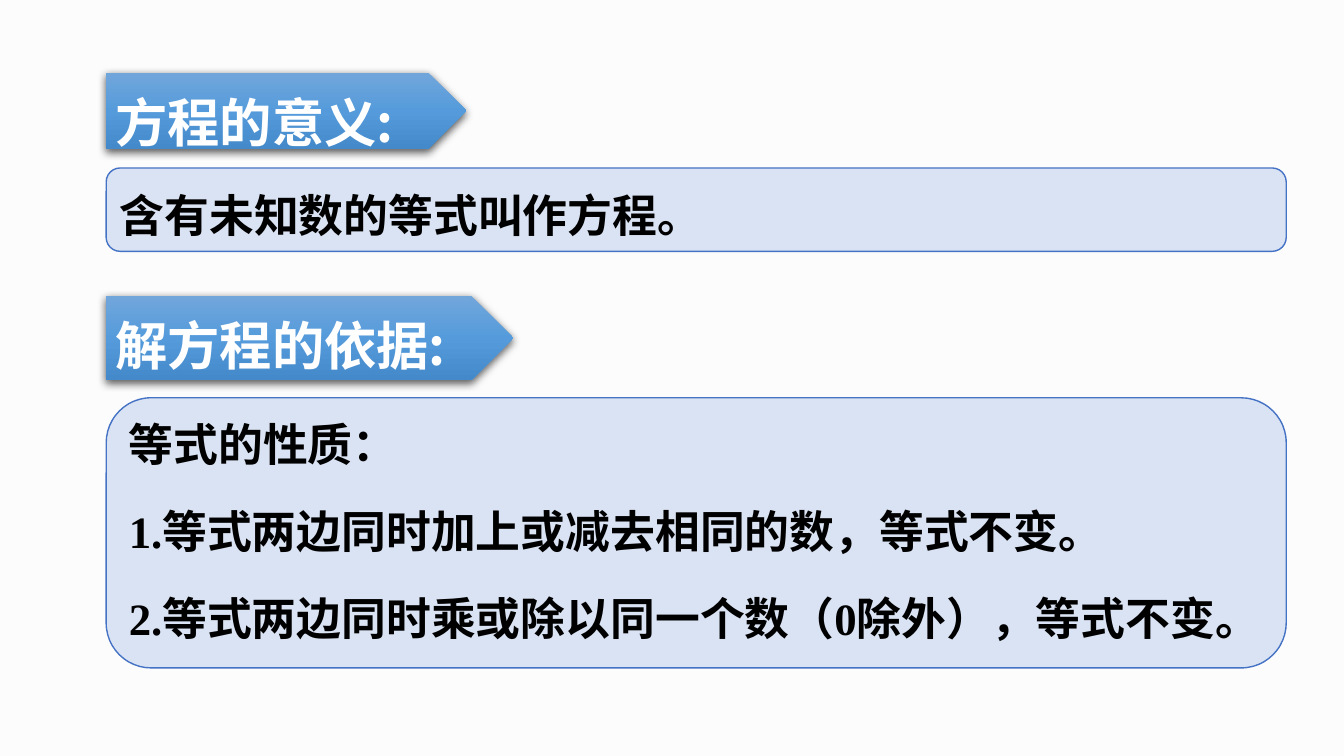
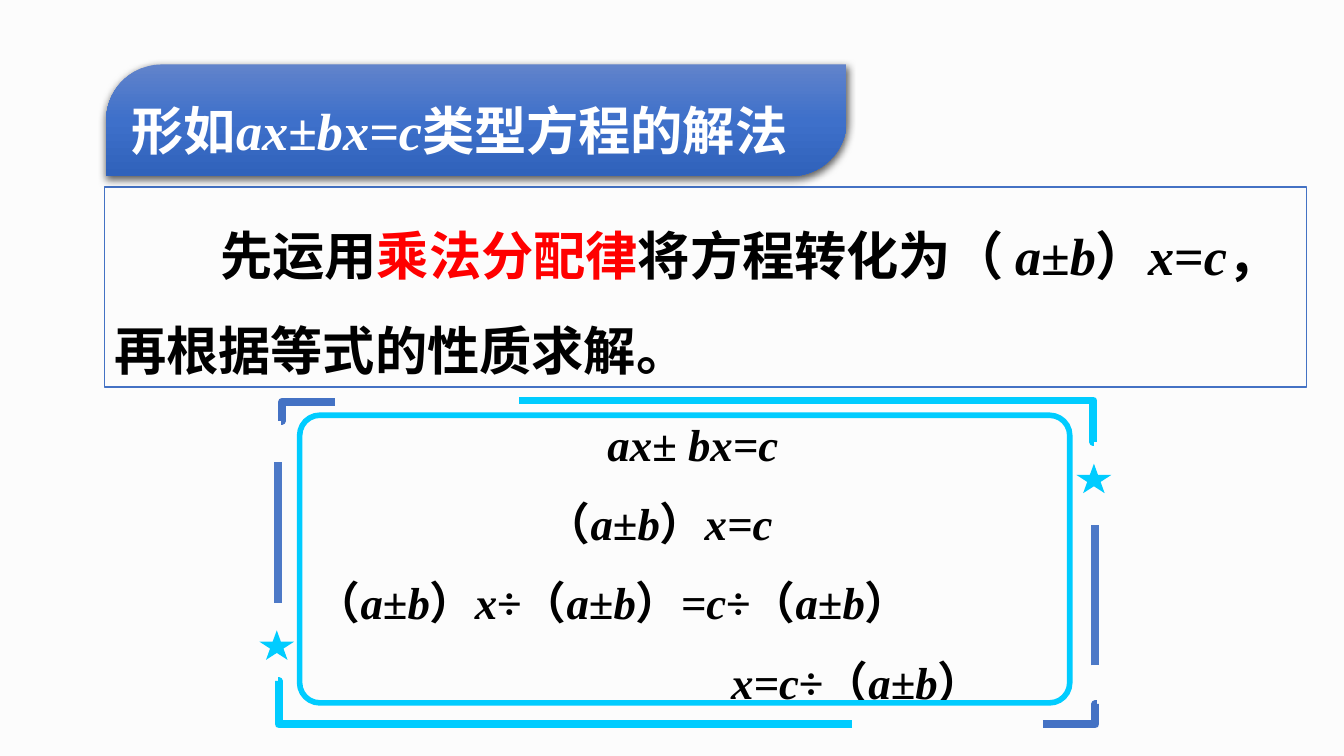
from lxml import etree
from pptx import Presentation
from pptx.dml.color import RGBColor
from pptx.enum.shapes import MSO_CONNECTOR as LINE, MSO_SHAPE as SHAPE
from pptx.enum.text import MSO_ANCHOR, MSO_AUTO_SIZE, PP_ALIGN
from pptx.oxml import parse_xml
from pptx.oxml.ns import nsdecls, qn
from pptx.util import Inches, Pt

WIDTH = 10
ASPECT = 16 / 9
LEFT = 0.79
PAPER = RGBColor(0xFC, 0xFC, 0xFC)
PANEL = RGBColor(0xDA, 0xE3, 0xF3)
BLUE = RGBColor(0x44, 0x72, 0xC4)
SOFT_BLUE = RGBColor(0x4D, 0x79, 0xC7)
CYAN = RGBColor(0x00, 0xCC, 0xFF)
RED = RGBColor(0xFF, 0, 0)
BLACK = RGBColor(0, 0, 0)
WHITE = RGBColor(0xFF, 0xFF, 0xFF)
SKY_BAND = (RGBColor(0x71, 0xA6, 0xDB), RGBColor(0x55, 0x9B, 0xDB), RGBColor(0x44, 0x8A, 0xCA))
ROYAL_BAND = (RGBColor(0x61, 0x83, 0xCB), RGBColor(0x3E, 0x70, 0xCA), RGBColor(0x30, 0x62, 0xBB))
SANS, SERIF = "Noto Sans CJK SC", "Times New Roman"

# In the wording, *...* is italic and #...# is red.
MEANING_TITLE = "方程的意义:"
MEANING = ["含有未知数的等式叫作方程。"]
BASIS_TITLE = "解方程的依据:"
BASIS = [
    "等式的性质：",
    "1.等式两边同时加上或减去相同的数，等式不变。",
    "2.等式两边同时乘或除以同一个数（0除外），等式不变。",
]
SOLVING_TITLE = "形如*ax*±*bx=c*类型方程的解法"
METHOD = ["先运用#乘法分配律#将方程转化为（* a*±*b*）*x*=*c*，再根据等式的性质求解。"]
STEPS = [  # left, width, equation
    (4.45, 2.02, "*ax*±* bx=c*"),
    (3.99, 2.88, "（*a*±*b*）*x=c*"),
    (2.28, 5.86, "（*a*±*b*）*x*÷（*a*±*b*）*=c*÷（*a*±*b*）"),
    (5.37, 2.69, "*x=c*÷（*a*±*b*）"),
]
STEP_TOP, STEP_PITCH = 2.98, 0.59
CORNERS = [  # start, end, colour, bend as a share of the width
    ((3.86, 2.98), (8.14, 3.29), CYAN, 0.999),
    ((6.34, 5.39), (2.07, 5.07), CYAN, 0.999),
    ((2.49, 2.99), (2.09, 3.13), BLUE, 0.979),
    ((7.76, 5.39), (8.16, 5.24), BLUE, 0.979),
]
SIDES = [((2.07, 3.44), (2.07, 4.49)), ((8.15, 4.95), (8.15, 3.91))]
STARS = [(1.93, 4.69), (8.01, 3.45)]


def write(shape, paragraphs, size, color=BLACK, font=SERIF, spacing=1.2, after=0, indent=0, inset=(0.07, 0.04)):
    frame = shape.text_frame
    frame.word_wrap = True
    frame.auto_size = MSO_AUTO_SIZE.NONE
    frame.vertical_anchor = MSO_ANCHOR.TOP
    frame.margin_left, frame.margin_top = map(Inches, inset)
    frame.margin_right, frame.margin_bottom = Inches(0.07), Inches(0.04)
    for number, wording in enumerate(paragraphs):
        paragraph = frame.add_paragraph() if number else frame.paragraphs[0]
        paragraph.alignment = PP_ALIGN.LEFT
        paragraph.line_spacing = spacing
        paragraph.space_before, paragraph.space_after = Pt(0), Pt(after)
        if indent:
            paragraph._p.get_or_add_pPr().set("indent", str(Inches(indent)))
        for i, part in enumerate(wording.split("*")):
            for j, piece in enumerate(part.split("#")):
                if not piece:
                    continue
                run = paragraph.add_run()
                run.text = piece
                run.font.name, run.font.size = font, Pt(size)
                run.font.bold, run.font.italic = True, i % 2 == 1
                run.font.color.rgb = RED if j % 2 else color
                east_asian = etree.SubElement(run._r.get_or_add_rPr(), qn("a:ea"))
                east_asian.set("typeface", SANS)


def add_outline(shapes, kind, box, line=None, width=0.75, fill=None):
    shape = shapes.add_shape(kind, *map(Inches, box))
    shape.shadow.inherit = False
    if fill is None:
        shape.fill.background()
    else:
        shape.fill.solid()
        shape.fill.fore_color.rgb = fill
    if line is None:
        shape.line.fill.background()
    else:
        shape.line.color.rgb = line
        shape.line.width = Pt(width)
    return shape


def add_band(slide, kind, box, colors):
    """Heading band with a vertical gradient and a soft shadow."""
    band = slide.shapes.add_shape(kind, *map(Inches, box))
    stops = "".join(
        f'<a:gs pos="{i * 50000}"><a:srgbClr val="{color}"/></a:gs>' for i, color in enumerate(colors)
    )
    properties = band._element.spPr
    properties.append(parse_xml(
        f'<a:gradFill {nsdecls("a")}><a:gsLst>{stops}</a:gsLst><a:lin ang="5400000" scaled="0"/></a:gradFill>'
    ))
    band.line.fill.background()
    properties.append(parse_xml(
        f'<a:effectLst {nsdecls("a")}><a:outerShdw blurRad="57150" dist="19050" dir="5400000" algn="ctr" '
        'rotWithShape="0"><a:srgbClr val="000000"><a:alpha val="63000"/></a:srgbClr></a:outerShdw></a:effectLst>'
    ))
    return band


def lay_title(slide, box):
    """Place the title placeholder in front of its band."""
    title = slide.shapes.title
    title.left, title.top, title.width, title.height = map(Inches, box)
    slide.shapes._spTree.append(title._element)
    return title


def add_stroke(shapes, kind, start, end, color, bend=None):
    stroke = shapes.add_connector(kind, *map(Inches, start + end))
    stroke.line.color.rgb, stroke.line.width = color, Pt(4.25)
    properties = stroke._element.spPr
    etree.SubElement(properties, qn("a:effectLst"))
    if bend is not None:
        guides = properties.find(qn("a:prstGeom")).get_or_add_avLst()
        guide = etree.SubElement(guides, qn("a:gd"))
        guide.set("name", "adj1")
        guide.set("fmla", f"val {round(bend * 100000)}")


def new_slide(deck):
    slide = deck.slides.add_slide(deck.slide_layouts[5])
    slide.background.fill.solid()
    slide.background.fill.fore_color.rgb = PAPER
    return slide


def build_review(deck):
    slide = new_slide(deck)
    heading = dict(size=28, color=WHITE, font=SANS)
    meaning_box, basis_box = (LEFT, 0.54, 2.68, 0.57), (LEFT, 2.2, 3.03, 0.63)
    add_band(slide, SHAPE.PENTAGON, meaning_box, SKY_BAND)
    write(lay_title(slide, meaning_box), [MEANING_TITLE], **heading)
    meaning = add_outline(slide.shapes, SHAPE.ROUNDED_RECTANGLE, (LEFT, 1.25, 8.78, 0.62), BLUE, fill=PANEL)
    write(meaning, MEANING, 24, font=SANS)
    write(add_band(slide, SHAPE.PENTAGON, basis_box, SKY_BAND), [BASIS_TITLE], **heading)
    basis = add_outline(slide.shapes, SHAPE.ROUNDED_RECTANGLE, (LEFT, 2.96, 8.78, 2.01), BLUE, fill=PANEL)
    write(basis, BASIS, 24, spacing=1.0, after=18)


def build_solving(deck):
    slide = new_slide(deck)
    for row, (left, width, equation) in enumerate(STEPS):
        box = (left, STEP_TOP + row * STEP_PITCH, width, 0.56)
        write(slide.shapes.add_textbox(*map(Inches, box)), [equation], 24)
    method = add_outline(slide.shapes, SHAPE.RECTANGLE, (0.78, 1.39, 8.94, 1.49), BLUE)
    write(method, METHOD, 28, spacing=1.5, indent=0.79)

    title_box = (LEFT, 0.48, 5.51, 0.83)
    band = add_band(slide, SHAPE.ROUND_2_DIAG_RECTANGLE, title_box, ROYAL_BAND)
    band.adjustments[0], band.adjustments[1] = 0.5, 0
    write(lay_title(slide, title_box), [SOLVING_TITLE], 28, WHITE, inset=(0.19, 0.16))

    ornament = slide.shapes.add_group_shape().shapes
    frame = add_outline(ornament, SHAPE.ROUNDED_RECTANGLE, (2.23, 3.09, 5.73, 2.14), CYAN, 3)
    frame.adjustments[0] = 0.07
    for start, end, color, bend in CORNERS:
        add_stroke(ornament, LINE.ELBOW, start, end, color, bend)
    for start, end in SIDES:
        add_stroke(ornament, LINE.STRAIGHT, start, end, SOFT_BLUE)
    for left, top in STARS:
        add_outline(ornament, SHAPE.STAR_5_POINT, (left, top, 0.26, 0.22), fill=CYAN)


def main():
    deck = Presentation()
    deck.slide_width, deck.slide_height = Inches(WIDTH), Inches(WIDTH / ASPECT)
    build_review(deck)
    build_solving(deck)
    deck.save("out.pptx")


if __name__ == "__main__":
    main()
